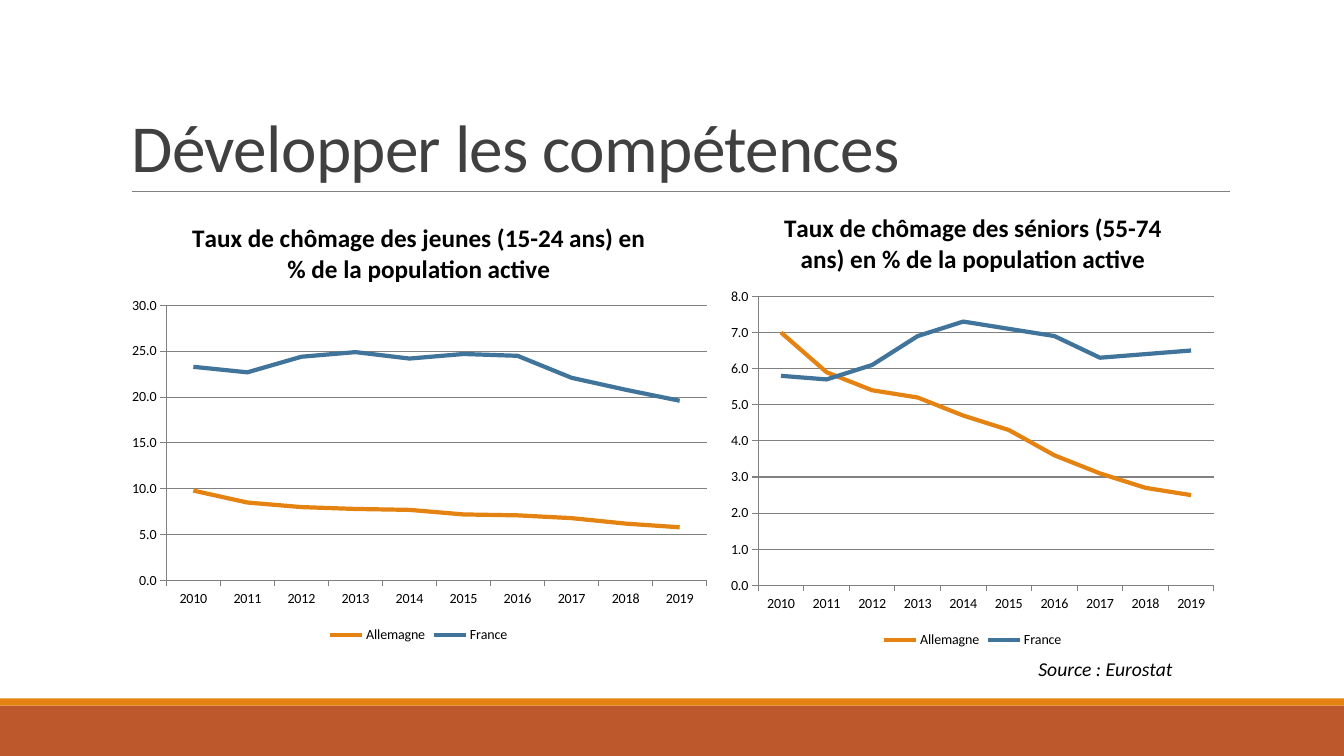
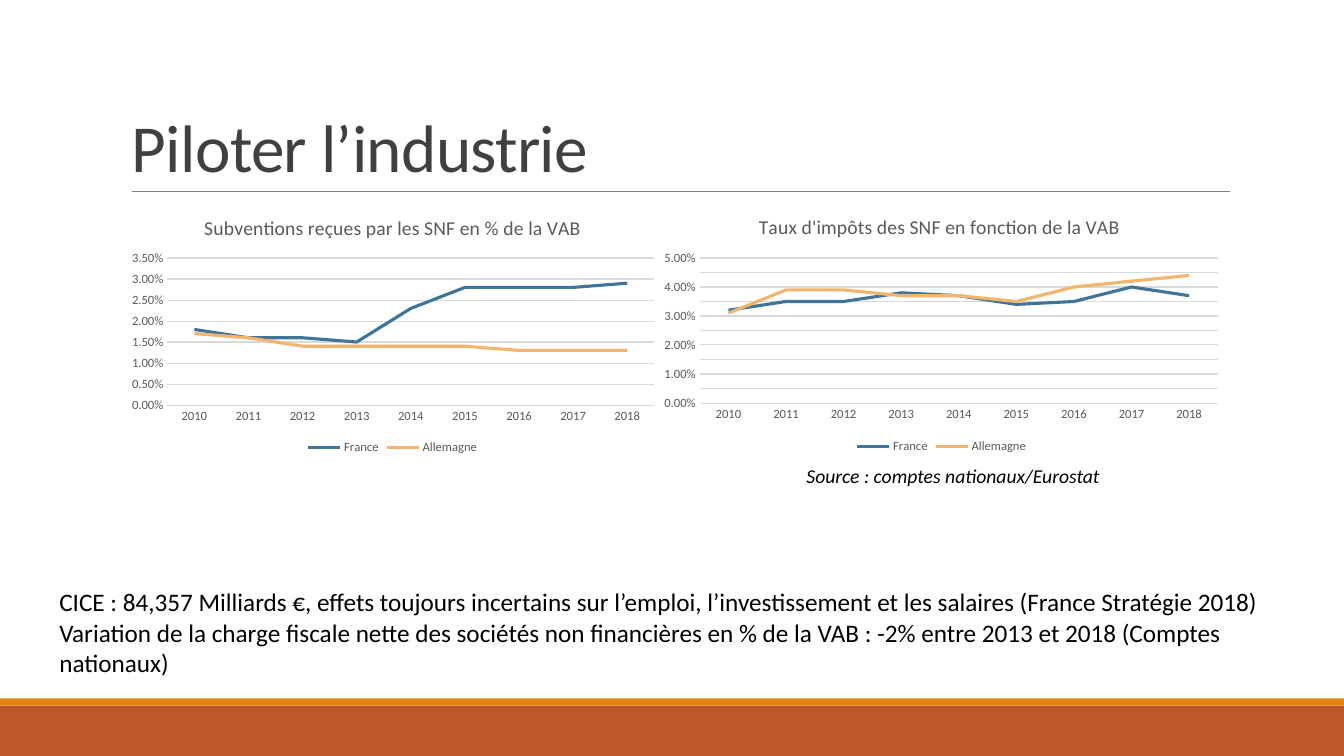
from pptx import Presentation, util as u
from pptx.chart.data import CategoryChartData
from pptx.dml.color import RGBColor
from pptx.enum import chart as charts, shapes, text
from pptx.oxml import ns, xmlchemy

FONT = "Calibri"
BLACK, TITLE, MUTED = "000000", "404040", "595959"
RULE, PALE_GRID = "808080", "D9D9D9"
RUST, ORANGE, PEACH, BLUE = "BD582C", "E48312", "F3B56C", "40749B"

# Chart looks: sizes in points, colours as hex
BOLD_LOOK = dict(title_size=18, title_bold=True, size=10, color=BLACK,
                 grid=RULE, axis=RULE, tick=charts.XL_TICK_MARK.OUTSIDE,
                 number_format="#,##0.0", weight=3)
LIGHT_LOOK = dict(title_size=14, title_bold=False, size=9, color=MUTED,
                  grid=PALE_GRID, axis=None, tick=charts.XL_TICK_MARK.NONE,
                  number_format="0.00%", weight=2.25)


def rgb(color):
    return RGBColor.from_string(color)


def style_font(font, size, color, bold=False, italic=False):
    font.name, font.size = FONT, u.Pt(size)
    font.bold, font.italic = bold, italic
    font.color.rgb = rgb(color)


def style_line(line, color, weight=0.75):
    """Set colour and width; no colour hides the line."""
    if color is None:
        line.fill.background()
    else:
        line.color.rgb = rgb(color)
        line.width = u.Pt(weight)


def add_text(slide, area, lines, size=18, color=BLACK, italic=False,
             anchor=text.MSO_ANCHOR.TOP, line_spacing=None, tracking=None):
    """Add one paragraph per line; tracking is in hundredths of a point."""
    box = slide.shapes.add_textbox(*map(u.Inches, area))
    frame = box.text_frame
    frame.word_wrap = True
    frame.vertical_anchor = anchor
    for index, line in enumerate(lines):
        para = frame.paragraphs[0] if index == 0 else frame.add_paragraph()
        if line_spacing:
            para.line_spacing = line_spacing
        span = para.add_run()
        span.text = line
        style_font(span.font, size, color, italic=italic)
        if tracking:
            span.font._element.set("spc", str(tracking))


def add_band(slide, top, height, color):
    band = slide.shapes.add_shape(shapes.MSO_SHAPE.RECTANGLE, 0, u.Inches(top),
                                  u.Inches(13.33), u.Inches(height))
    band.shadow.inherit = False
    band.fill.solid()
    band.fill.fore_color.rgb = rgb(color)
    band.line.fill.background()


def add_rule(slide, left, right, top):
    rule = slide.shapes.add_connector(
        shapes.MSO_CONNECTOR.STRAIGHT, *map(u.Inches, (left, top, right, top)))
    style_line(rule.line, RULE, 0.5)
    properties = rule._element.spPr
    properties.append(xmlchemy.OxmlElement("a:effectLst"))


def add_page(deck, title):
    """Add a slide with the shared bands, rule and title."""
    slide = deck.slides.add_slide(deck.slide_layouts[6])
    add_band(slide, 7, 0.5, RUST)
    add_band(slide, 6.93, 0.07, ORANGE)
    add_rule(slide, 1.31, 12.2, 1.9)
    add_text(slide, (1.21, 0.31, 11, 1.59), [title], size=48, color=TITLE,
             anchor=text.MSO_ANCHOR.BOTTOM, line_spacing=0.85, tracking=-50)
    return slide


def place_plot(chart, area, plot_area):
    """Fix the inner plot; both areas are in inches on the slide."""
    left, top, width, height = area
    plot_left, plot_top, plot_width, plot_height = plot_area
    element = chart._chartSpace.chart.plotArea
    for layout in element.findall(ns.qn("c:layout")):
        element.remove(layout)
    layout = xmlchemy.OxmlElement("c:layout")
    manual = xmlchemy.OxmlElement("c:manualLayout")
    settings = [("layoutTarget", "inner"), ("xMode", "edge"), ("yMode", "edge"),
                ("x", (plot_left - left) / width),
                ("y", (plot_top - top) / height),
                ("w", plot_width / width), ("h", plot_height / height)]
    for name, value in settings:
        setting = xmlchemy.OxmlElement(f"c:{name}")
        setting.set("val", str(value))
        manual.append(setting)
    layout.append(manual)
    element.insert(0, layout)


def add_line_chart(slide, area, plot_area, title, years, series, look,
                   top_value, step):
    """Draw series given as (name, colour, values) tuples."""
    data = CategoryChartData(number_format=look["number_format"])
    data.categories = [str(year) for year in years]
    for name, _, values in series:
        data.add_series(name, values)
    chart = slide.shapes.add_chart(charts.XL_CHART_TYPE.LINE,
                                   *map(u.Inches, area), data).chart
    style_font(chart.font, look["size"], look["color"])
    place_plot(chart, area, plot_area)

    chart.has_title = True
    chart.chart_title.include_in_layout = False
    heading = chart.chart_title.text_frame.paragraphs[0].add_run()
    heading.text = title
    style_font(heading.font, look["title_size"], look["color"],
               bold=look["title_bold"])

    chart.has_legend = True
    chart.legend.position = charts.XL_LEGEND_POSITION.BOTTOM
    chart.legend.include_in_layout = False
    style_font(chart.legend.font, look["size"], look["color"])

    years_axis, values_axis = chart.category_axis, chart.value_axis
    for axis in (years_axis, values_axis):
        axis.major_tick_mark = look["tick"]
        axis.minor_tick_mark = charts.XL_TICK_MARK.NONE
        style_font(axis.tick_labels.font, look["size"], look["color"])
    style_line(years_axis.format.line, look["grid"])
    style_line(values_axis.format.line, look["axis"])
    values_axis.has_major_gridlines = True
    style_line(values_axis.major_gridlines.format.line, look["grid"])
    values_axis.minimum_scale, values_axis.maximum_scale = 0, top_value
    values_axis.major_unit = step
    values_axis.tick_labels.number_format = look["number_format"]
    values_axis.tick_labels.number_format_is_linked = False

    plot = chart.plots[0]
    plot.vary_by_categories = False
    for line, (_, color, _) in zip(plot.series, series):
        line.smooth = False
        line.marker.style = charts.XL_MARKER_STYLE.NONE
        style_line(line.format.line, color, look["weight"])


def build_skills_page(deck):
    slide = add_page(deck, "Développer les compétences")
    years = range(2010, 2020)
    add_line_chart(
        slide, (1.18, 2, 5.95, 4.42), (1.65, 3.03, 5.36, 2.73),
        "Taux de chômage des jeunes (15-24 ans) en % de la population active",
        years,
        [("Allemagne", ORANGE,
          (9.8, 8.5, 8, 7.8, 7.7, 7.2, 7.1, 6.8, 6.2, 5.8)),
         ("France", BLUE,
          (23.3, 22.7, 24.4, 24.9, 24.2, 24.7, 24.5, 22.1, 20.8, 19.6))],
        BOLD_LOOK, top_value=30, step=5)
    add_line_chart(
        slide, (7.15, 1.9, 5, 4.57), (7.52, 2.94, 4.52, 2.87),
        "Taux de chômage des séniors (55-74 ans) en % de la population active",
        years,
        [("Allemagne", ORANGE,
          (7, 5.9, 5.4, 5.2, 4.7, 4.3, 3.6, 3.1, 2.7, 2.5)),
         ("France", BLUE,
          (5.8, 5.7, 6.1, 6.9, 7.3, 7.1, 6.9, 6.3, 6.4, 6.5))],
        BOLD_LOOK, top_value=8, step=1)
    add_text(slide, (10.2, 6.47, 1.95, 0.34), ["Source : Eurostat"],
             size=14, italic=True)


def build_industry_page(deck):
    slide = add_page(deck, "Piloter l’industrie")
    years = range(2010, 2019)
    add_line_chart(
        slide, (1.2, 1.99, 5.39, 2.56), (1.66, 2.56, 4.83, 1.46),
        "Subventions reçues par les SNF en % de la VAB", years,
        [("France", BLUE, (0.018, 0.016, 0.016, 0.015, 0.023,
                           0.028, 0.028, 0.028, 0.029)),
         ("Allemagne", PEACH, (0.017, 0.016, 0.014, 0.014, 0.014,
                               0.014, 0.013, 0.013, 0.013))],
        LIGHT_LOOK, top_value=0.035, step=0.005)
    add_line_chart(
        slide, (6.48, 1.98, 5.72, 2.56), (6.94, 2.56, 5.14, 1.44),
        "Taux d'impôts des SNF en fonction de la VAB ", years,
        [("France", BLUE, (0.032, 0.035, 0.035, 0.038, 0.037,
                           0.034, 0.035, 0.04, 0.037)),
         ("Allemagne", PEACH, (0.031, 0.039, 0.039, 0.037, 0.037,
                               0.035, 0.04, 0.042, 0.044))],
        LIGHT_LOOK, top_value=0.05, step=0.005)
    add_text(slide, (0.49, 5.77, 12.36, 1.01), [
        "CICE : 84,357 Milliards €, effets toujours incertains sur l’emploi, "
        "l’investissement et les salaires (France Stratégie 2018)",
        "Variation de la charge fiscale nette des sociétés non financières "
        "en % de la VAB : -2% entre 2013 et 2018 (Comptes nationaux)"])
    add_text(slide, (7.9, 4.55, 4, 0.34),
             ["Source : comptes nationaux/Eurostat"], size=14, italic=True)


def main():
    deck = Presentation()
    deck.slide_width, deck.slide_height = u.Inches(13.33), u.Inches(7.5)
    build_skills_page(deck)
    build_industry_page(deck)
    deck.save("out.pptx")


if __name__ == "__main__":
    main()
